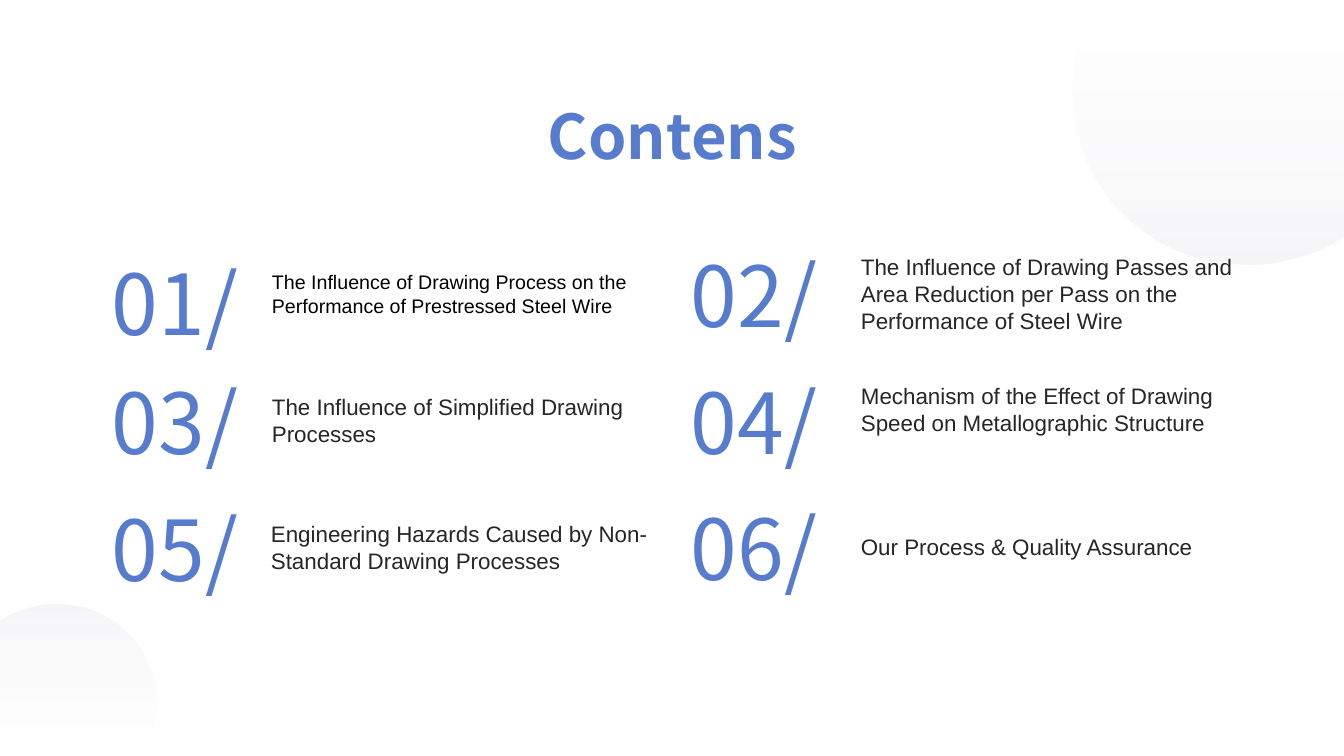
"""Build a contents slide with six numbered topics and two soft corner circles."""
from lxml import etree
from pptx import Presentation
from pptx.dml.color import RGBColor
from pptx.enum.text import MSO_ANCHOR, PP_ALIGN
from pptx.oxml.ns import qn
from pptx.util import Emu, Pt

CENTER, LEFT = PP_ALIGN.CENTER, PP_ALIGN.LEFT
MIDDLE = MSO_ANCHOR.MIDDLE
HEAD_FONT, BODY_FONT = "Noto Sans CJK SC", "Arial"
BLUE, DARK, BLACK = "577CCE", "262626", "000000"
WIDTH, HEIGHT = 1344, 756


def px(n):
    return Emu(round(n * 12192000 / WIDTH))


def add_text(box, text, font, size, color, align=LEFT):
    tf = s.shapes.add_textbox(*map(px, box)).text_frame
    tf.word_wrap = True
    tf.vertical_anchor = MIDDLE
    p = tf.paragraphs[0]
    p.alignment = align
    r = p.add_run()
    r.text = text
    r.font.name = font
    r.font.size = Pt(size)
    r.font.color.rgb = RGBColor.from_string(color)
    etree.SubElement(r.font._element, qn("a:ea")).set("typeface", font)
    return p


prs = Presentation()
prs.slide_width, prs.slide_height = px(WIDTH), px(HEIGHT)
s = prs.slides.add_slide(prs.slide_layouts[6])

circles = [
    (270,
     [(1101, 0), (1344, 0), (1344, 236), (1331, 244)],
     [[(1305, 257), (1277, 265), (1247, 265)],
      [(1150, 265), (1073, 188), (1073, 93)],
      [(1073, 64), (1079, 35), (1094, 11)]]),
    (90,
     [(140, 756), (0, 756), (0, 621), (8, 616)],
     [[(22, 609), (38, 604), (55, 604)],
      [(111, 604), (156, 648), (156, 703)],
      [(156, 720), (151, 735), (144, 750)]]),
]
for angle, corners, curves in circles:
    points = [(px(x), px(y)) for x, y in corners + [c[-1] for c in curves]]
    builder = s.shapes.build_freeform(*points[0])
    builder.add_line_segments(points[1:], close=True)
    sp = builder.convert_to_shape()
    segments = list(sp._element.iter(qn("a:lnTo")))[len(corners) - 1:]
    for segment, curve in zip(segments, curves):
        segment.tag = qn("a:cubicBezTo")
        segment.remove(segment[0])
        for x, y in curve:
            pt = etree.SubElement(segment, qn("a:pt"))
            pt.set("x", str(px(x) - sp.left))
            pt.set("y", str(px(y) - sp.top))
    sp.shadow.inherit = False
    sp.line.fill.background()
    sp.fill.gradient()
    sp.fill.gradient_angle = angle
    for stop, color in zip(sp.fill.gradient_stops, ("FFFFFF", "D8D8E4")):
        stop.color.rgb = RGBColor.from_string(color)
    for clr, opacity in zip(sp._element.spPr.iter(qn("a:srgbClr")), (10, 24)):
        etree.SubElement(clr, qn("a:alpha")).set("val", str(opacity * 1000))

topics = [
    (90, 238, 262, 248, 91, 14, BLACK,
     "The Influence of Drawing Process on the Performance of Prestressed Steel Wire"),
    (669, 230, 851, 248, 91, 16, DARK,
     "The Influence of Drawing Passes and Area Reduction per Pass on the Performance of Steel Wire"),
    (90, 357, 262, 375, 90, 16, DARK,
     "The Influence of Simplified Drawing Processes"),
    (669, 357, 851, 375, 68, 16, DARK,
     "Mechanism of the Effect of Drawing Speed on Metallographic Structure"),
    (90, 484, 261, 501, 92, 16, DARK,
     "Engineering Hazards Caused by Non-Standard Drawing Processes"),
    (669, 483, 851, 501, 91, 16, DARK,
     "Our Process & Quality Assurance"),
]
for i, (num_x, num_y, x, y, h, size, color, text) in enumerate(topics, 1):
    add_text((num_x, num_y, 170, 127), f"{i:02}/", HEAD_FONT, 60, BLUE, CENTER)
    add_text((x, y, 408, h), text, BODY_FONT, size, color)

title = add_text((295, 88, 755, 103), "Contens", HEAD_FONT, 44, BLUE, CENTER)
title.line_spacing = 0.9
title.runs[0].font.bold = True

prs.save("out.pptx")
